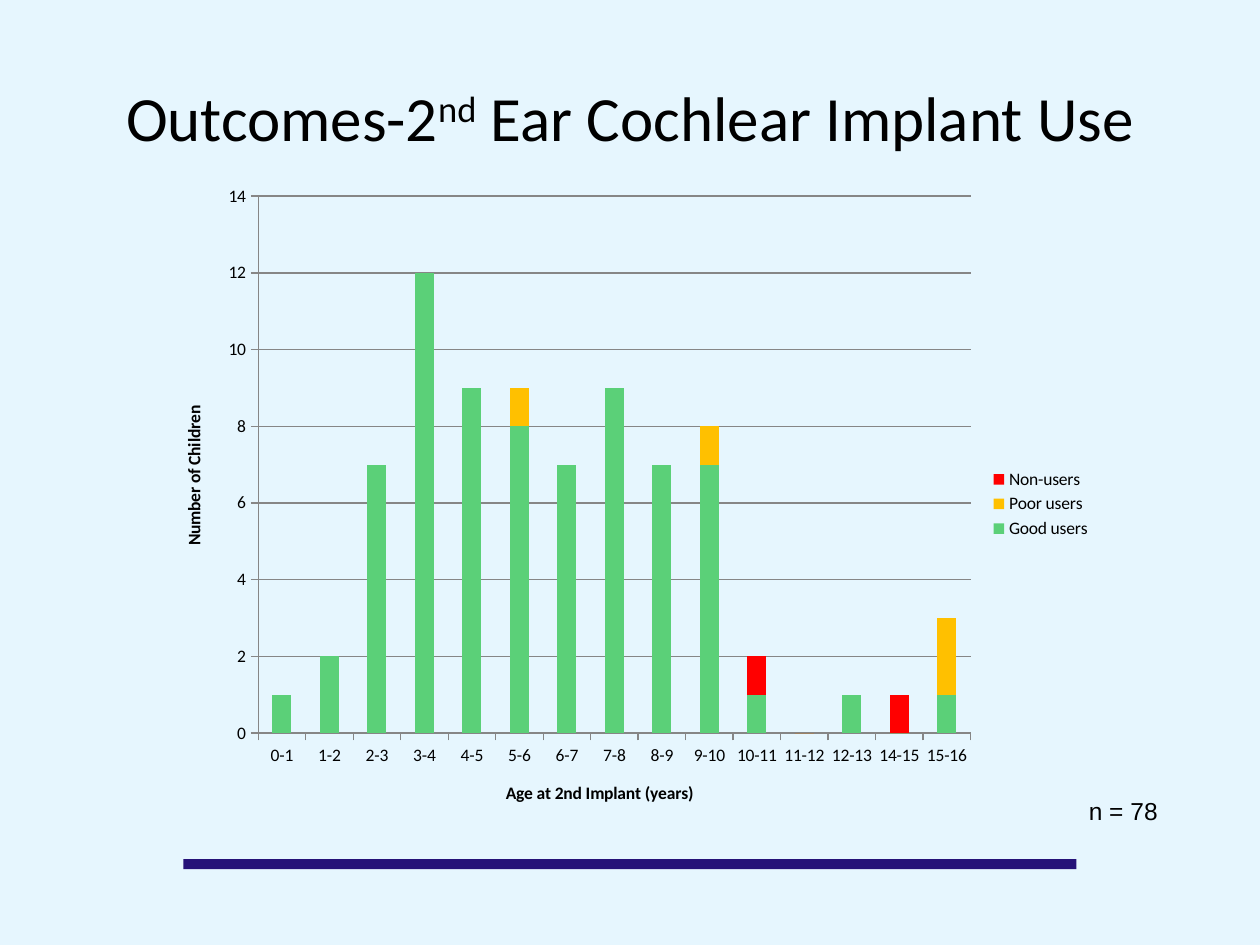
from lxml.etree import SubElement
from pptx import Presentation
from pptx.chart.data import CategoryChartData
from pptx.dml.color import RGBColor
from pptx.enum.chart import XL_CHART_TYPE, XL_LEGEND_POSITION, XL_TICK_MARK
from pptx.enum.shapes import MSO_SHAPE
from pptx.enum.text import MSO_ANCHOR, MSO_AUTO_SIZE, PP_ALIGN
from pptx.oxml.ns import qn
from pptx.util import Cm, Pt

COLORS = {
    "background": "E6F6FE",
    "bar": "251278",
    "text": "000000",
    "axis": "868686",
    "Good users": "5BD078",
    "Poor users": "FFC000",
    "Non-users": "FF0000",
}
AGES = ["0-1", "1-2", "2-3", "3-4", "4-5", "5-6", "6-7", "7-8", "8-9",
        "9-10", "10-11", "11-12", "12-13", "14-15", "15-16"]
CHILDREN = {
    "Good users": [1, 2, 7, 12, 9, 8, 7, 9, 7, 7, 1, 0, 1, 0, 1],
    "Poor users": [0, 0, 0, 0, 0, 1, 0, 0, 0, 1, 0, 0, 0, 0, 2],
    "Non-users": [0, 0, 0, 0, 0, 0, 0, 0, 0, 0, 1, 0, 0, 1, 0],
}


def color(name):
    return RGBColor.from_string(COLORS[name])


def style_font(font, size, name="Calibri", bold=False):
    font.name, font.size, font.bold = name, Pt(size), bold
    font.color.rgb = color("text")


def add_title(page, box):
    title = page.shapes.title
    title.left, title.top, title.width, title.height = box
    frame = title.text_frame
    frame.word_wrap = True
    frame.vertical_anchor = MSO_ANCHOR.MIDDLE
    para = frame.paragraphs[0]
    para.alignment = PP_ALIGN.CENTER
    for text, raised in (("Outcomes-2", False), ("nd", True),
                         (" Ear Cochlear Implant Use", False)):
        span = para.add_run()
        span.text = text
        style_font(span.font, 36)
        if raised:
            span.font._element.set("baseline", "30000")


def style_axis(axis, title):
    axis.has_title = True
    span = axis.axis_title.text_frame.paragraphs[0].add_run()
    span.text = title
    style_font(span.font, 10, bold=True)
    axis.major_tick_mark = XL_TICK_MARK.OUTSIDE
    axis.format.line.color.rgb = color("axis")


def place_plot(chart, **fractions):
    """Fix the inner plot area at fractions of the chart's size."""
    plot_area = chart._chartSpace.chart.plotArea
    layout = plot_area.find(qn("c:layout"))
    if layout is None:
        layout = SubElement(plot_area, qn("c:layout"))
        plot_area.insert(0, layout)
    manual = SubElement(layout, qn("c:manualLayout"))
    settings = {"layoutTarget": "inner", "xMode": "edge", "yMode": "edge", **fractions}
    for tag, value in settings.items():
        SubElement(manual, qn(f"c:{tag}")).set("val", str(value))


def add_outcome_chart(page, box):
    data = CategoryChartData()
    data.categories = AGES
    for name, counts in CHILDREN.items():
        data.add_series(name, counts)
    chart = page.shapes.add_chart(XL_CHART_TYPE.COLUMN_STACKED, *box, data).chart
    style_font(chart.font, 10)
    chart.has_title = False
    chart.has_legend = True
    chart.legend.position = XL_LEGEND_POSITION.RIGHT
    chart.legend.include_in_layout = False

    plot = chart.plots[0]
    plot.gap_width, plot.overlap, plot.vary_by_categories = 150, 100, False
    for series in plot.series:
        series.format.fill.solid()
        series.format.fill.fore_color.rgb = color(series.name)

    style_axis(chart.category_axis, "Age at 2nd Implant (years)")
    values = chart.value_axis
    style_axis(values, "Number of Children")
    values.minimum_scale, values.maximum_scale, values.major_unit = 0, 14, 2
    values.major_gridlines.format.line.color.rgb = color("axis")
    place_plot(chart, x=0.11, y=0.03, w=0.75, h=0.82)


def add_sample_size(page, box):
    frame = page.shapes.add_textbox(*box).text_frame
    frame.word_wrap = False
    frame.auto_size = MSO_AUTO_SIZE.SHAPE_TO_FIT_TEXT
    span = frame.paragraphs[0].add_run()
    span.text = "n = 78"
    style_font(span.font, 14, "Arial")


def add_footer_bar(page, box):
    bar = page.shapes.add_shape(MSO_SHAPE.RECTANGLE, *box)
    bar.shadow.inherit = False
    bar.fill.solid()
    bar.fill.fore_color.rgb = color("bar")
    bar.line.fill.background()


def main():
    deck = Presentation()
    deck.slide_width, deck.slide_height = Cm(25.4), Cm(19.05)
    page = deck.slides.add_slide(deck.slide_layouts[5])
    page.background.fill.solid()
    page.background.fill.fore_color.rgb = color("background")
    add_footer_bar(page, (Cm(3.7), Cm(17.32), Cm(18), Cm(0.2)))
    add_title(page, (Cm(1.27), Cm(0.76), Cm(22.86), Cm(3.18)))
    add_sample_size(page, (Cm(21.7), Cm(15.92), Cm(1.9), Cm(0.86)))
    add_outcome_chart(page, (Cm(3.1), Cm(3.56), Cm(19.15), Cm(13.2)))
    deck.save("out.pptx")


if __name__ == "__main__":
    main()
